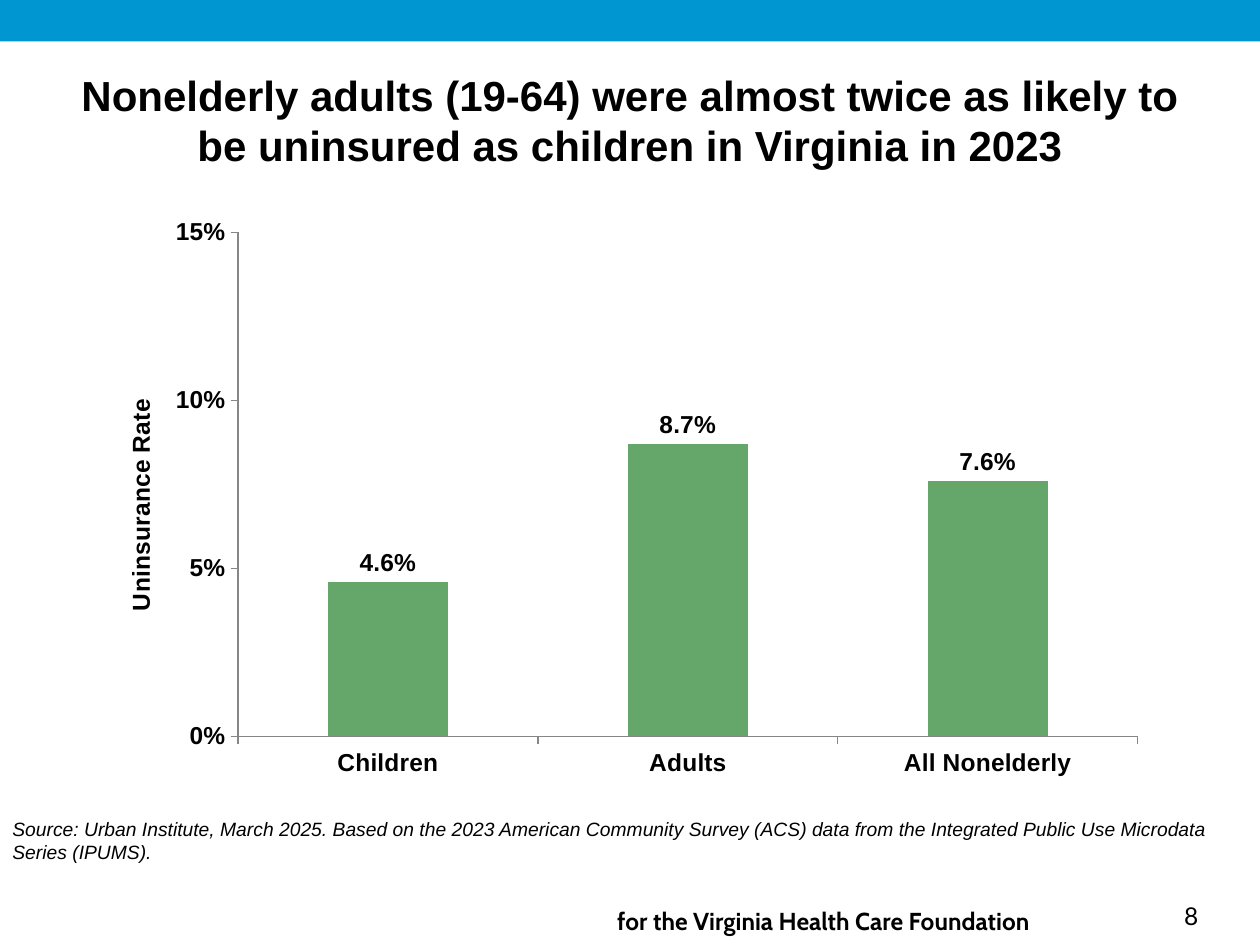
from dataclasses import dataclass

from lxml.etree import SubElement
from pptx import Presentation
from pptx.chart.data import CategoryChartData
from pptx.dml.color import RGBColor
from pptx.enum.chart import XL_CHART_TYPE, XL_LABEL_POSITION, XL_TICK_MARK
from pptx.enum.shapes import MSO_SHAPE
from pptx.enum.text import MSO_ANCHOR, MSO_AUTO_SIZE, PP_ALIGN
from pptx.oxml import parse_xml
from pptx.oxml.ns import nsdecls, qn
from pptx.util import Inches, Pt

# Content
TITLE = ("Nonelderly adults (19-64) were almost twice as likely to "
         "be uninsured as children in Virginia in 2023")
SOURCE = ("Source: Urban Institute, March 2025. Based on the 2023 American Community "
          "Survey (ACS) data from the Integrated Public Use Microdata Series (IPUMS).")
FOOTER = "for the Virginia Health Care Foundation"
PAGE_NUMBER = "8"
AXIS_TITLE = "Uninsurance Rate"
RATES = {"Children": 0.046, "Adults": 0.087, "All Nonelderly": 0.076}


@dataclass(frozen=True)
class Theme:
    band: RGBColor = RGBColor(0x00, 0x96, 0xD2)
    bar: RGBColor = RGBColor(0x65, 0xA7, 0x6B)
    axis: RGBColor = RGBColor(0x86, 0x86, 0x86)
    ink: RGBColor = RGBColor(0x00, 0x00, 0x00)
    font: str = "Arial"
    footer_font: str = "Cabin"
    number_font: str = "Lato"
    title_size: int = 24
    label_size: int = 14
    source_size: int = 11


THEME = Theme()

# Layout as shares of the slide: left, top, width, height
WIDTH, HEIGHT = Inches(10), Inches(7.5)
BAND = (0, 0, 1, 0.33 / 7.5)
TITLE_AREA = (0.05, 0.5 / 7.5, 0.9, 0.91 / 7.5)
CHART_AREA = (0.07, 1.66 / 7.5, 0.85, 4.6 / 7.5)
SOURCE_AREA = (0, 6.44 / 7.5, 1, 0.47 / 7.5)
FOOTER_AREA = (0.48, 7.14 / 7.5, 0.48, 0.26 / 7.5)
NUMBER_AREA = (0.93, 7.1 / 7.5, 0.07, 0.34 / 7.5)
# Shares of the chart
PLOT_PART = {"x": 0.14, "y": 0.04, "w": 0.84, "h": 0.87}
AXIS_TITLE_PART = {"x": 0.03, "y": 0.32}


def area(shares):
    left, top, width, height = shares
    return (round(left * WIDTH), round(top * HEIGHT),
            round(width * WIDTH), round(height * HEIGHT))


def style_font(font, size, name=THEME.font, bold=False, italic=False):
    font.size, font.name, font.bold, font.italic = Pt(size), name, bold, italic
    font.color.rgb = THEME.ink


def write(box, text, size, align=PP_ALIGN.LEFT, **style):
    frame = box.text_frame
    frame.text = text
    frame.word_wrap = True
    frame.auto_size = MSO_AUTO_SIZE.NONE
    frame.vertical_anchor = MSO_ANCHOR.TOP
    para = frame.paragraphs[0]
    para.alignment = align
    style_font(para.runs[0].font, size, **style)


def place_part(parent, shares):
    """Give a chart part a fixed place inside the chart."""
    layout = parent.find(qn("c:layout"))
    if layout is None:
        layout = parse_xml(f"<c:layout {nsdecls('c')}/>")
        parent.insert(0, layout)
    manual = SubElement(layout, qn("c:manualLayout"))
    if "w" in shares:
        SubElement(manual, qn("c:layoutTarget")).set("val", "inner")
    for side in ("x", "y"):
        SubElement(manual, qn(f"c:{side}Mode")).set("val", "edge")
    for side, share in shares.items():
        SubElement(manual, qn(f"c:{side}")).set("val", str(share))


def add_rate_chart(page):
    data = CategoryChartData()
    data.categories = list(RATES)
    data.add_series("Series 1", list(RATES.values()))
    chart = page.shapes.add_chart(
        XL_CHART_TYPE.COLUMN_CLUSTERED, *area(CHART_AREA), data).chart
    chart.has_legend = chart.has_title = False
    style_font(chart.font, THEME.label_size, bold=True)

    # Columns and their labels
    plot = chart.plots[0]
    plot.gap_width, plot.vary_by_categories = 150, False
    fill = plot.series[0].format.fill
    fill.solid()
    fill.fore_color.rgb = THEME.bar
    plot.has_data_labels = True
    labels = plot.data_labels
    labels.show_value = True
    labels.number_format, labels.number_format_is_linked = "0.0%", False
    labels.position = XL_LABEL_POSITION.OUTSIDE_END
    style_font(labels.font, THEME.label_size, bold=True)

    # Axes
    values = chart.value_axis
    for axis in (chart.category_axis, values):
        axis.has_major_gridlines = False
        axis.major_tick_mark = XL_TICK_MARK.OUTSIDE
        axis.format.line.color.rgb = THEME.axis
        axis.format.line.width = Pt(0.75)
    values.minimum_scale, values.maximum_scale, values.major_unit = 0, 0.15, 0.05
    values.tick_labels.number_format = "0%"
    values.tick_labels.number_format_is_linked = False
    title = values.axis_title
    title.text_frame.text = AXIS_TITLE
    style_font(title.text_frame.paragraphs[0].runs[0].font, THEME.label_size, bold=True)

    place_part(plot._element.getparent(), PLOT_PART)
    place_part(title._element, AXIS_TITLE_PART)


def main():
    deck = Presentation()
    deck.slide_width, deck.slide_height = WIDTH, HEIGHT
    page = deck.slides.add_slide(deck.slide_layouts[5])

    # Top band
    band = page.shapes.add_shape(MSO_SHAPE.RECTANGLE, *area(BAND))
    band.shadow.inherit = False
    band.fill.solid()
    band.fill.fore_color.rgb = THEME.band
    band.line.fill.background()

    # Title
    title = page.shapes.title
    title.left, title.top, title.width, title.height = area(TITLE_AREA)
    write(title, TITLE, THEME.title_size, PP_ALIGN.CENTER, bold=True)

    add_rate_chart(page)

    # Source, footer and page number
    for shares, text, size, style in (
        (SOURCE_AREA, SOURCE, THEME.source_size, {"italic": True}),
        (FOOTER_AREA, FOOTER, THEME.label_size,
         {"name": THEME.footer_font, "bold": True}),
        (NUMBER_AREA, PAGE_NUMBER, THEME.label_size, {"name": THEME.number_font}),
    ):
        write(page.shapes.add_textbox(*area(shares)), text, size, **style)

    deck.save("out.pptx")


if __name__ == "__main__":
    main()
